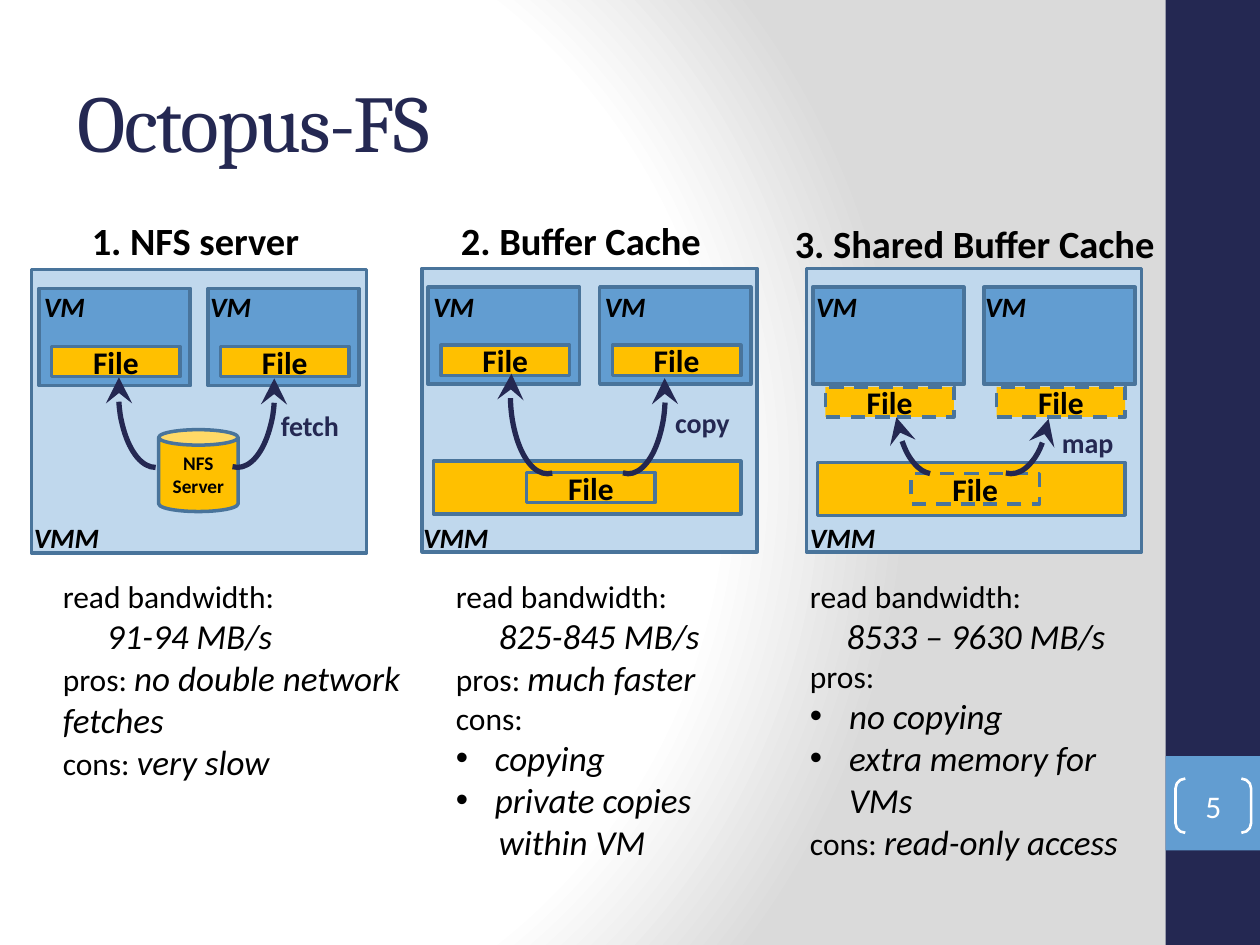
from pptx import Presentation
from pptx.dml.color import RGBColor
from pptx.enum.dml import MSO_LINE
from pptx.enum.shapes import MSO_SHAPE
from pptx.enum.text import MSO_ANCHOR, PP_ALIGN
from pptx.oxml import parse_xml
from pptx.oxml.ns import qn
from pptx.util import Inches, Pt
from lxml import etree

RECT, CAN, ARC = MSO_SHAPE.RECTANGLE, MSO_SHAPE.CAN, MSO_SHAPE.ARC
BRACKET = MSO_SHAPE.DOUBLE_BRACKET
DASH, MIDDLE, CENTER = MSO_LINE.DASH, MSO_ANCHOR.MIDDLE, PP_ALIGN.CENTER
NAVY, BLUE, PALE, EDGE = "242852", "629DD1", "C0D8ED", "49749B"
GOLD, BLACK, WHITE = "FFC000", "000000", "FFFFFF"

# Notes: (kind, label, value); "in" is indented, "dot" is bulleted.
# Arcs: (place, rotation, start and end adjustment, arrow end).
PANELS = [
    dict(head="1. NFS server", head_at=(0.63, 1.67, 1.91, 0.47),
         at=(0.25, 2.14), vms=(0.31, 1.65), tags=(0.25, 1.57), vmm=0.17,
         drop=0.46, mapped=False, cache=None,
         verb="fetch", verb_at=(2.13, 3.19),
         arcs=[((0.94, 2.48, 0.59, 1.23), 180, (161.99, 11.5), "tailEnd"),
               ((1.59, 2.48, 0.59, 1.23), 0, (205.5, 56.24), "headEnd")],
         notes_at=(0.4, 4.53, 2.93, 1.75), indent=0.35,
         notes=[("", "read bandwidth:", ""), ("in", "", "91-94 MB/s"),
                ("", "pros: ", "no double network fetches"),
                ("", "cons: ", "very slow")]),
    dict(head="2. Buffer Cache", head_at=(3.56, 1.67, 2.14, 0.47),
         at=(3.35, 2.13), vms=(3.4, 4.76), tags=(3.34, 4.7), vmm=3.26,
         drop=0.46, mapped=False, cache=3.66,
         verb="copy", verb_at=(5.26, 3.17),
         arcs=[((4.05, 2.48, 0.59, 1.28), 180, (159.95, 17.04), "tailEnd"),
               ((4.69, 2.48, 0.59, 1.28), 0, (202.58, 56.24), "headEnd")],
         notes_at=(3.52, 4.53, 2.98, 2.39), indent=0.34,
         notes=[("", "read bandwidth:", ""), ("in", "", "825-845 MB/s"),
                ("", "pros: ", "much faster"), ("", "cons:", ""),
                ("dot", "", "copying"), ("dot", "", "private copies"),
                ("in", "", "within VM")]),
    dict(head="3. Shared Buffer Cache", head_at=(6.21, 1.7, 3.1, 0.47),
         at=(6.4, 2.13), vms=(6.45, 7.81), tags=(6.38, 7.72), vmm=6.33,
         drop=0.79, mapped=True, cache=3.67,
         verb="map", verb_at=(8.33, 3.33),
         arcs=[((7.1, 2.48, 0.61, 1.28), 180, (163.27, 195.96), "tailEnd"),
               ((7.71, 2.48, 0.63, 1.28), 0, (20.68, 56.24), "headEnd")],
         notes_at=(6.33, 4.53, 2.88, 2.39), indent=0.29,
         notes=[("", "read bandwidth:", ""), ("in", "", "8533 – 9630 MB/s"),
                ("", "pros:", ""), ("dot", "", "no copying"),
                ("dot", "", "extra memory for VMs"),
                ("", "cons: ", "read-only access")]),
]

BACK = """<a:gradFill rotWithShape="1"
 xmlns:a="http://schemas.openxmlformats.org/drawingml/2006/main"><a:gsLst>
<a:gs pos="0"><a:srgbClr val="FFFFFF"/></a:gs>
<a:gs pos="75000"><a:srgbClr val="FFFFFF"/></a:gs>
<a:gs pos="100000"><a:srgbClr val="DADADA"/></a:gs></a:gsLst>
<a:path path="circle">
<a:fillToRect l="20000" t="50000" r="100000" b="50000"/></a:path>
</a:gradFill>"""

prs = Presentation()
prs.slide_width, prs.slide_height = Inches(10), Inches(7.5)
slide = prs.slides.add_slide(prs.slide_layouts[6])


def rgb(code):
    return RGBColor.from_string(code)


def style(font, size, color=BLACK, bold=False, italic=False, name="Calibri"):
    font.name, font.size, font.color.rgb = name, Pt(size), rgb(color)
    font.bold, font.italic = bold, italic


def shape(kind, at, fill=None, line=EDGE, width=2, dash=False):
    item = slide.shapes.add_shape(kind, *map(Inches, at))
    item.shadow.inherit = False
    if fill:
        item.fill.solid()
        item.fill.fore_color.rgb = rgb(fill)
    else:
        item.fill.background()
    if line:
        item.line.color.rgb, item.line.width = rgb(line), Pt(width)
        if dash:
            item.line.dash_style = DASH
    else:
        item.line.fill.background()
    return item


def label(item, text, size, color=BLACK, bold=True):
    """Put centred text inside a shape."""
    frame = item.text_frame
    frame.word_wrap, frame.vertical_anchor = True, MIDDLE
    para = frame.paragraphs[0]
    para.text, para.alignment = text, CENTER
    style(para.font, size, color, bold)


def textbox(at, text="", wrap=True, **look):
    frame = slide.shapes.add_textbox(*map(Inches, at)).text_frame
    frame.word_wrap = wrap
    if text:
        frame.paragraphs[0].text = text
        style(frame.paragraphs[0].font, **look)
    return frame


def file_box(left, top, dash):
    box = shape(RECT, (left, top, 1.02, 0.24), GOLD, dash=dash)
    label(box, "File", 18)


def arrow(at, turn, angles, end):
    arc = shape(ARC, at, line=NAVY, width=3)
    arc.rotation = turn
    arc.adjustments[0], arc.adjustments[1] = angles
    etree.SubElement(arc.line._get_or_add_ln(), qn("a:" + end),
                     type="stealth", w="lg", len="lg")


def write_notes(at, notes, indent):
    frame = textbox(at)
    for i, (kind, name, value) in enumerate(notes):
        para = frame.add_paragraph() if i else frame.paragraphs[0]
        props = para._p.get_or_add_pPr()
        if kind == "in":
            props.set("marL", str(Inches(indent)))
        elif kind == "dot":
            props.set("marL", str(Inches(0.31)))
            props.set("indent", str(Inches(-0.31)))
            etree.SubElement(props, qn("a:buFont"), typeface="Arial")
            etree.SubElement(props, qn("a:buChar"), char="•")
        for text, size, italic in ((name, 18, False), (value, 20, True)):
            if text:
                run = para.add_run()
                run.text = text
                style(run.font, size, italic=italic)


def draw_panel(p):
    left, top = p["at"]
    shape(RECT, (left, top, 2.66, 2.25), PALE)
    for x, width in zip(p["vms"], (2.25, 2)):
        shape(RECT, (x, top + 0.15, 1.2, 0.77), BLUE, width=width)
    for x in p["vms"]:
        file_box(x + 0.1, top + 0.15 + p["drop"], p["mapped"])
    if p["cache"]:
        shape(RECT, (left + 0.09, p["cache"], 2.44, 0.42), GOLD)
        file_box(left + 0.83, p["cache"] + 0.09, p["mapped"])
    else:
        can = shape(CAN, (left + 1.01, top + 1.27, 0.63, 0.65), GOLD)
        can.adjustments[0] = 0.195
        label(can, "NFS Server", 11)
    for arc in p["arcs"]:
        arrow(*arc)
    textbox((*p["verb_at"], 0.78, 0.37), p["verb"],
            size=16, color=NAVY, bold=True)
    textbox(p["head_at"], p["head"], wrap=False, size=22, bold=True)
    write_notes(p["notes_at"], p["notes"], p["indent"])
    tags = [("VMM", p["vmm"], 4.08, 0.74)]
    tags += [("VM", x, 2.25, 0.66) for x in p["tags"]]
    for text, x, y, width in tags:
        textbox((x, y, width, 0.37), text, size=16, bold=True, italic=True)


slide.background.fill.gradient()
grad = slide._element.find(".//" + qn("a:gradFill"))
grad.getparent().replace(grad, parse_xml(BACK))

shape(RECT, (9.25, 0, 0.75, 7.5), NAVY, None)
shape(RECT, (9.25, 6, 0.75, 0.75), BLUE, None)
title = textbox((0.52, 0.33, 8.33, 1.25))
title.vertical_anchor = MIDDLE
run = title.paragraphs[0].add_run()
run.text = "Octopus-FS"
style(run.font, 46, NAVY, name="Cambria")
run.font._element.set("spc", "-100")

for panel in PANELS:
    draw_panel(panel)

page = shape(BRACKET, (9.33, 6.18, 0.6, 0.43), line=WHITE, width=1.5)
page.adjustments[0] = 0.18
label(page, "5", 18, WHITE, False)
frame = page.text_frame
frame.margin_left = frame.margin_right = 0
frame.margin_top = frame.margin_bottom = 0

prs.save("out.pptx")
